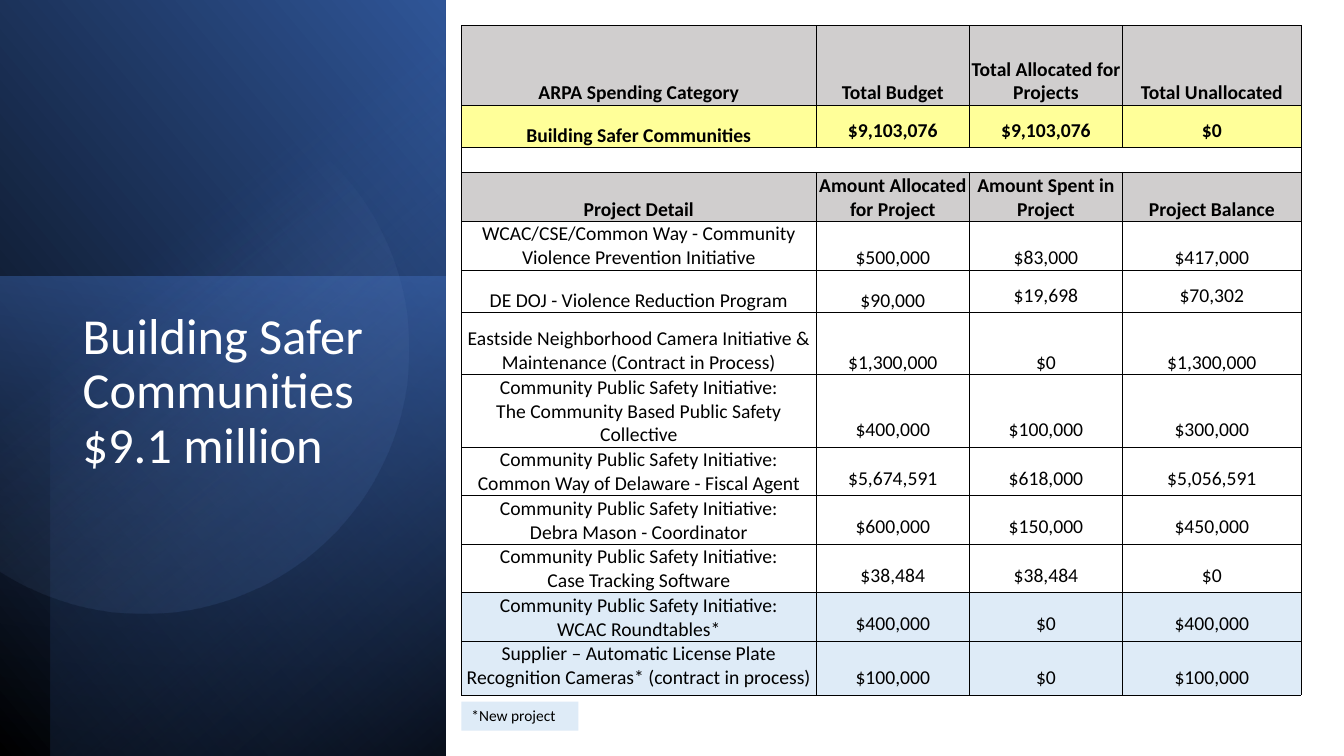
from math import acos, cos, sin

from lxml import etree
from pptx import Presentation
from pptx.dml.color import RGBColor
from pptx.enum.shapes import MSO_SHAPE
from pptx.enum.text import MSO_ANCHOR, MSO_AUTO_SIZE, PP_ALIGN
from pptx.oxml.ns import qn
from pptx.util import Cm, Pt

RECTANGLE = MSO_SHAPE.RECTANGLE
TOP, BOTTOM = MSO_ANCHOR.TOP, MSO_ANCHOR.BOTTOM
LEFT, CENTER = PP_ALIGN.LEFT, PP_ALIGN.CENTER
NO_AUTOFIT = MSO_AUTO_SIZE.NONE
FONT = "Calibri"
BLACK, WHITE = "000000", "FFFFFF"
GREY, YELLOW, PALE_BLUE = "D0CECE", "FFFF99", "DEEBF7"


def color(value):
    return RGBColor.from_string(value)


def write(frame, text, size=14, ink=BLACK, bold=False, align=LEFT, anchor=TOP, spacing=1.0):
    frame.word_wrap = True
    frame.vertical_anchor = anchor
    for index, line in enumerate(text.split("\n")):
        para = frame.paragraphs[0] if index == 0 else frame.add_paragraph()
        para.alignment = align
        para.line_spacing = spacing
        span = para.add_run()
        span.text = line
        span.font.name = FONT
        span.font.size = Pt(size)
        span.font.bold = bold
        span.font.color.rgb = color(ink)


deck = Presentation()
deck.slide_width, deck.slide_height = Cm(33.87), Cm(19.05)
page = deck.slides.add_slide(deck.slide_layouts[5])
shapes = page.shapes

panels = [
    (-3.94, 3.94, 19.1, 11.23, 90, True, 310, [(0, BLACK, 100), (100, "2F5597", 100)]),
    (-0.43, 7.39, 12.09, 11.23, 270, False, 190, [(0, "4472C4", 50), (100, "203864", 0)]),
    (-3.28, 4.55, 19.05, 9.96, 270, True, 220, [(0, BLACK, 59), (69, "4472C4", 0)]),
]
backdrops = []
for left, top, width, height, rotation, flipped, angle, stops in panels:
    panel = shapes.add_shape(RECTANGLE, Cm(left), Cm(top), Cm(width), Cm(height))
    panel.rotation = rotation
    if flipped:
        panel._element.spPr.find(qn("a:xfrm")).set("flipH", "1")
    backdrops.append((panel, angle, stops))

center_x, center_y, radius = 3.63, 8.8, 6.67
cut = acos(-center_x / radius)
steps = 120
arc = []
for step in range(steps + 1):
    turn = -cut + 2 * cut * step / steps
    arc.append((Cm(center_x + radius * cos(turn)), Cm(center_y + radius * sin(turn))))
outline = shapes.build_freeform(*arc[0])
outline.add_line_segments(arc[1:], close=True)
circle = outline.convert_to_shape()
backdrops.append((circle, 51.6, [(39, "8FAADC", 0), (100, "2F5597", 26)]))

for shape, angle, stops in backdrops:
    shape.shadow.inherit = False
    shape.line.fill.background()
    shape.fill.gradient()
    shape.fill.gradient_angle = 360 - angle
    for stop, (position, tone, _) in zip(shape.fill.gradient_stops, stops):
        stop.position = position / 100
        stop.color.rgb = color(tone)
    tones = shape._element.spPr.iter(qn("a:srgbClr"))
    for tone, (_, _, opacity) in zip(list(tones), stops):
        etree.SubElement(tone, qn("a:alpha")).set("val", str(opacity * 1000))

title = shapes.title
shapes._spTree.append(title._element)
title.left, title.top, title.width, title.height = Cm(1.83), Cm(7.7), Cm(8), Cm(8.53)
write(title.text_frame, "Building Safer Communities $9.1 million", size=36, ink=WHITE, spacing=0.9)
title.text_frame.auto_size = NO_AUTOFIT

INITIATIVE = "Community Public Safety Initiative:\n"
rows = [
    (2.01, GREY, True, 4, ["ARPA Spending Category", "Total Budget",
                           "Total Allocated for Projects", "Total Unallocated"]),
    (1.07, YELLOW, True, 1, ["Building Safer Communities", "$9,103,076", "$9,103,076", "$0"]),
    (0.6, WHITE, False, 4, ["", "", "", ""]),
    (1.24, GREY, True, 4, ["Project Detail", "Amount Allocated for Project",
                           "Amount Spent in Project", "Project Balance"]),
    (1.07, WHITE, False, 4, ["WCAC/CSE/Common Way - Community Violence Prevention Initiative",
                             "$500,000", "$83,000", "$417,000"]),
    (1.07, WHITE, False, 2, ["DE DOJ - Violence Reduction Program",
                             "$90,000", "$19,698", "$70,302"]),
    (1.57, WHITE, False, 4, ["Eastside Neighborhood Camera Initiative & "
                             "Maintenance (Contract in Process)",
                             "$1,300,000", "$0", "$1,300,000"]),
    (1.42, WHITE, False, 1, [INITIATIVE + "The Community Based Public Safety Collective",
                             "$400,000", "$100,000", "$300,000"]),
    (1.14, WHITE, False, 1, [INITIATIVE + "Common Way of Delaware - Fiscal Agent",
                             "$5,674,591", "$618,000", "$5,056,591"]),
    (1.14, WHITE, False, 1, [INITIATIVE + "Debra Mason - Coordinator",
                             "$600,000", "$150,000", "$450,000"]),
    (1.14, WHITE, False, 1, [INITIATIVE + "Case Tracking Software",
                             "$38,484", "$38,484", "$0"]),
    (1.14, PALE_BLUE, False, 1, [INITIATIVE + "WCAC Roundtables*",
                                 "$400,000", "$0", "$400,000"]),
    (1.14, PALE_BLUE, False, 0, ["Supplier – Automatic License Plate "
                                 "Recognition Cameras* (contract in process)",
                                 "$100,000", "$0", "$100,000"]),
]
column_widths = [8.94, 3.86, 3.86, 4.5]
table_height = sum(row[0] for row in rows)
budget = shapes.add_table(len(rows), len(column_widths), Cm(11.63), Cm(0.64),
                          Cm(sum(column_widths)), Cm(table_height)).table
budget.first_row = False
budget.horz_banding = False
for column, width in zip(budget.columns, column_widths):
    column.width = Cm(width)

for row_index, (height, tint, bold, first_raised, texts) in enumerate(rows):
    budget.rows[row_index].height = Cm(height)
    for column_index, text in enumerate(texts):
        cell = budget.cell(row_index, column_index)
        cell.margin_left = cell.margin_right = cell.margin_top = Cm(0.02)
        cell.margin_bottom = Cm(0.13 if column_index >= first_raised else 0)
        if text:
            write(cell.text_frame, text, bold=bold, align=CENTER)
        else:
            ending = etree.SubElement(cell.text_frame.paragraphs[0]._p, qn("a:endParaRPr"))
            ending.set("sz", "1400")
        cell.vertical_anchor = BOTTOM
        properties = cell._tc.get_or_add_tcPr()
        for side in ("a:lnL", "a:lnR", "a:lnT", "a:lnB"):
            border = etree.SubElement(properties, qn(side), w=str(Pt(0.5)))
            ink = etree.SubElement(etree.SubElement(border, qn("a:solidFill")), qn("a:srgbClr"))
            ink.set("val", BLACK)
        cell.fill.solid()
        cell.fill.fore_color.rgb = color(tint)
budget.cell(2, 0).merge(budget.cell(2, 3))

note = shapes.add_shape(RECTANGLE, Cm(11.63), Cm(17.68), Cm(2.95), Cm(0.73))
note.shadow.inherit = False
note.line.fill.background()
note.fill.solid()
note.fill.fore_color.rgb = color(PALE_BLUE)
write(note.text_frame, "*New project", size=11)

deck.save("out.pptx")
